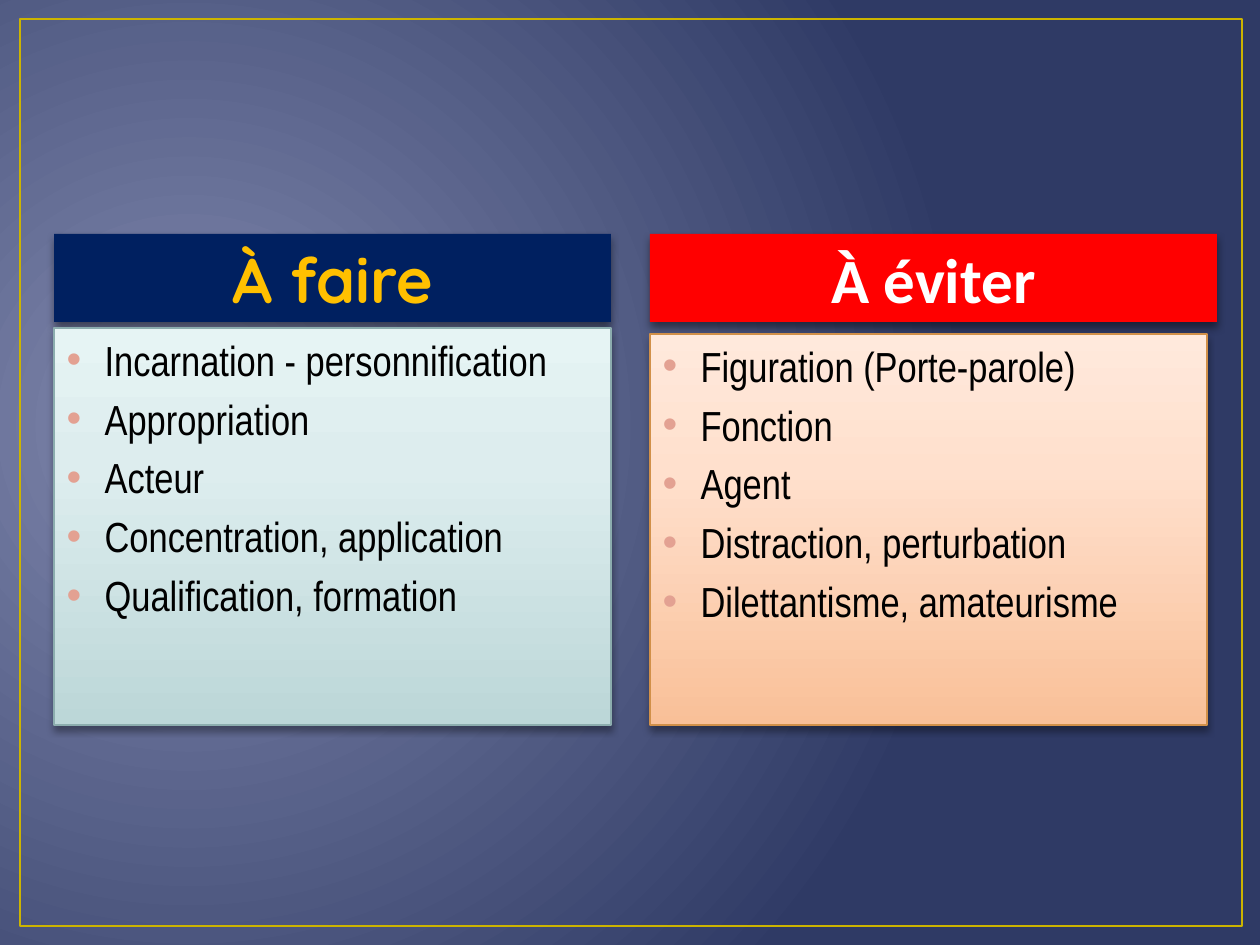
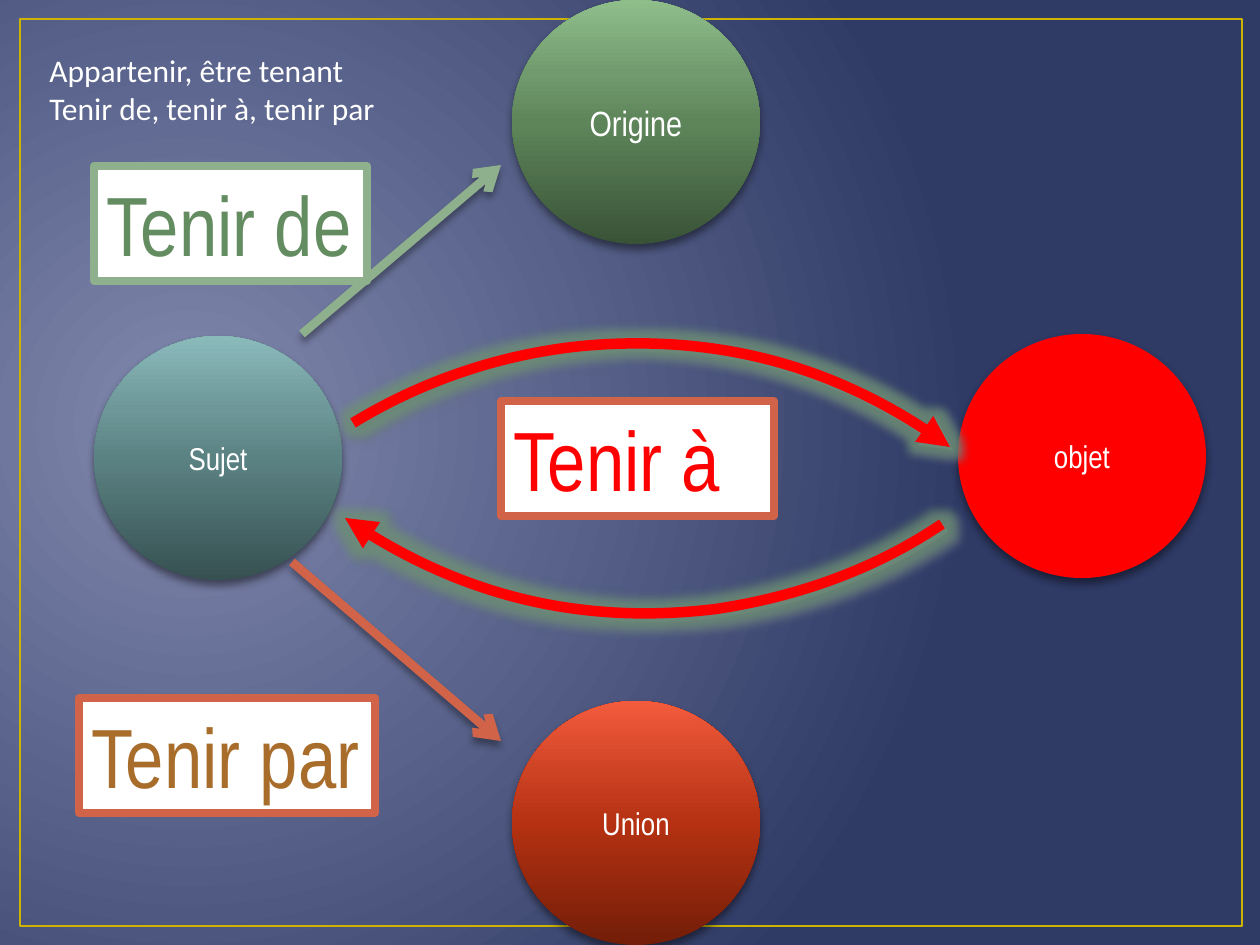
from dataclasses import dataclass

from lxml.etree import SubElement
from pptx import Presentation
from pptx.dml.color import RGBColor
from pptx.enum.shapes import MSO_CONNECTOR as Conn, MSO_SHAPE as Geo
from pptx.enum.text import MSO_ANCHOR as Anchor, MSO_AUTO_SIZE as Auto, PP_ALIGN as Align
from pptx.oxml.ns import qn
from pptx.util import Emu, Pt

PX = 914400 / 126
COMPARISON, BLANK = 4, 6


def px(n):
    return Emu(round(n * PX))


def sub(parent, tag, **attrs):
    return SubElement(parent, qn(tag), {k: str(v) for k, v in attrs.items()})


def add_color(parent, color, alpha=100):
    clr = sub(parent, "a:srgbClr", val=color)
    if alpha < 100:
        sub(clr, "a:alpha", val=alpha * 1000)


@dataclass(frozen=True)
class Theme:
    # gradients are (position in percent, colour) stops
    backdrop: tuple = ((0, "8189AE"), (100, "2F3A65"))
    mint: tuple = ((0, "BCD7D8"), (65, "DDEDEE"), (100, "E6F4F4"))
    peach: tuple = ((0, "F9C098"), (65, "FFE0CD"), (100, "FFE9DC"))
    green_ball: tuple = ((0, "395337"), (50, "5E855A"), (70, "719B6E"), (100, "8FBE8B"))
    rust_ball: tuple = ((0, "731D08"), (50, "B53112"), (70, "CC4223"), (100, "F45B3D"))
    teal_ball: tuple = ((0, "375152"), (50, "5B8283"), (70, "6E9799"), (100, "8BBABB"))
    frame: str = "CCB400"
    mint_edge: str = "8CADAE"
    peach_edge: str = "D19049"
    bullet: str = "E3A192"
    navy: str = "002060"
    gold: str = "FFC000"
    red: str = "FF0000"
    green: str = "8FB08C"
    green_text: str = "648C61"
    rust: str = "D16349"
    ochre: str = "A96D2B"
    white: str = "FFFFFF"
    black: str = "000000"
    glow: str = "719B6E"
    # shadows are colour, opacity, blur, distance, angle
    soft: tuple = ("000000", 35, 4, 3, 90)
    strong: tuple = ("000000", 45, 5, 3, 90)
    hard: tuple = ("646B86", 100, 0, 2.8, 45)
    narrow: str = "Arial Narrow"
    sans: str = "Calibri"
    rounded: str = "Quicksand"
    heading: int = 36
    label: int = 48
    bullets: int = 24
    origin: int = 20
    text: int = 18


class Deck:
    def __init__(self, theme):
        self.t = theme
        self.prs = Presentation()
        self.prs.slide_width, self.prs.slide_height = px(1260), px(945)
        self.slide = None

    def new_slide(self, layout):
        self.slide = self.prs.slides.add_slide(self.prs.slide_layouts[layout])

    def master(self):
        """Give the slide master its radial backdrop and gold frame."""
        master = self.prs.slide_master
        master.background.fill.gradient()
        grad = next(master.element.iter(qn("a:gradFill")))
        self.stops(grad, self.t.backdrop)
        circle = sub(grad, "a:path", path="circle")
        sub(circle, "a:fillToRect", l=15000, t=50000, r=85000, b=60000)
        frame = self.slide.shapes.add_shape(Geo.RECTANGLE, *map(px, (20, 19, 1222, 907)))
        self.style(frame, None, self.t.frame, 1.5)
        master.shapes.element.append(frame.element)

    def stops(self, grad, stops):
        for child in list(grad):
            grad.remove(child)
        gs_list = sub(grad, "a:gsLst")
        for pos, color in stops:
            add_color(sub(gs_list, "a:gs", pos=pos * 1000), color)

    def effects(self, sp, shadow=None, glow=None):
        effects = sub(sp.element.find(qn("p:spPr")), "a:effectLst")
        if glow:
            add_color(sub(effects, "a:glow", rad=Pt(11)), glow, 60)
        if shadow:
            color, alpha, blur, dist, angle = shadow
            outer = sub(effects, "a:outerShdw", blurRad=Pt(blur), dist=Pt(dist),
                        dir=angle * 60000, algn="ctr", rotWithShape=0)
            add_color(outer, color, alpha)

    def style(self, sp, fill, line=None, width=0.75, shadow=None, glow=None):
        """Fill with nothing, one colour or upward gradient stops; then line and effects."""
        if fill is None:
            sp.fill.background()
        elif isinstance(fill, str):
            sp.fill.solid()
            sp.fill.fore_color.rgb = RGBColor.from_string(fill)
        else:
            sp.fill.gradient()
            grad = next(sp.element.iter(qn("a:gradFill")))
            self.stops(grad, fill)
            sub(grad, "a:lin", ang=270 * 60000, scaled=0)
        if line:
            self.stroke(sp, line, width)
        else:
            sp.line.fill.background()
        self.effects(sp, shadow, glow)

    def stroke(self, sp, color, width, head=None):
        sp.line.color.rgb = RGBColor.from_string(color)
        sp.line.width = Pt(width)
        if head:
            sub(sp.element.find(".//" + qn("a:ln")), "a:tailEnd", type=head)

    def set_text(self, sp, lines, size, color, font,
                 align=Align.LEFT, anchor=Anchor.TOP, bold=False):
        tf = sp.text_frame
        tf.text = "\n".join(lines)
        tf.word_wrap, tf.auto_size, tf.vertical_anchor = True, Auto.NONE, anchor
        for p in tf.paragraphs:
            p.alignment = align
            p.font.size, p.font.name, p.font.bold = Pt(size), font, bold
            p.font.color.rgb = RGBColor.from_string(color)

    def placeholder(self, idx, box):
        sp = self.slide.placeholders[idx]
        sp.left, sp.top, sp.width, sp.height = map(px, box)
        return sp

    def heading(self, idx, box, text, fill, color, font):
        sp = self.placeholder(idx, box)
        self.style(sp, fill, shadow=self.t.strong)
        self.set_text(sp, [text], self.t.heading, color, font, Align.CENTER, bold=True)

    def bullets(self, idx, box, items, fill, edge):
        sp = self.placeholder(idx, box)
        self.style(sp, fill, edge, shadow=self.t.soft)
        self.set_text(sp, items, self.t.bullets, self.t.black, self.t.narrow)
        for p_pr in sp.element.iter(qn("a:pPr")):
            p_pr.set("marL", str(px(38)))
            p_pr.set("indent", str(px(-38)))
            font = p_pr.find(qn("a:defRPr"))
            add_color(sub(p_pr, "a:buClr"), self.t.bullet)
            sub(p_pr, "a:buChar", char="•")
            p_pr.append(font)

    def ball(self, x, y, text, fill, size):
        sp = self.slide.shapes.add_shape(Geo.OVAL, *map(px, (x, y, 248, 244)))
        self.style(sp, fill, shadow=self.t.strong)
        self.set_text(sp, [text], size, self.t.white, self.t.narrow,
                      Align.CENTER, Anchor.MIDDLE)

    def label(self, x, y, w, text, color, edge):
        sp = self.slide.shapes.add_shape(Geo.RECTANGLE, *map(px, (x, y, w, 115)))
        self.style(sp, self.t.white, edge, 4.33)
        self.set_text(sp, [text], self.t.label, color, self.t.narrow)
        sp.text_frame.margin_right = 0

    def note(self, box, lines):
        sp = self.slide.shapes.add_textbox(*map(px, box))
        self.set_text(sp, lines, self.t.text, self.t.white, self.t.sans)

    def arrow(self, start, end, color):
        sp = self.slide.shapes.add_connector(Conn.STRAIGHT, *map(px, start + end))
        self.stroke(sp, color, 5, "arrow")
        self.effects(sp, self.t.soft)

    def arc(self, start, *points):
        """Draw a glowing arrow along Bézier curves, three points to a curve."""
        builder = self.slide.shapes.build_freeform(*start, scale=PX)
        builder.add_line_segments(points, close=False)
        sp = builder.convert_to_shape()
        outline = next(sp.element.iter(qn("a:path")))
        segments = outline.findall(qn("a:lnTo"))
        for i in range(0, len(segments), 3):
            curve = sub(outline, "a:cubicBezTo")
            for segment in segments[i:i + 3]:
                curve.append(segment[0])
                outline.remove(segment)
        self.style(sp, None, self.t.red, 6, self.t.hard, self.t.glow)
        self.stroke(sp, self.t.red, 6, "triangle")


def do_and_avoid(deck):
    t = deck.t
    deck.new_slide(COMPARISON)
    deck.master()
    title = deck.slide.shapes.title.element
    title.getparent().remove(title)
    deck.heading(1, (54, 234, 557, 88), "À faire", t.navy, t.gold, t.rounded)
    deck.bullets(2, (54, 328, 557, 397),
                 ["Incarnation - personnification", "Appropriation", "Acteur",
                  "Concentration, application", "Qualification, formation"],
                 t.mint, t.mint_edge)
    deck.heading(3, (650, 234, 567, 88), "À éviter", t.red, t.white, t.sans)
    deck.bullets(4, (650, 334, 557, 391),
                 ["Figuration (Porte-parole)", "Fonction", "Agent",
                  "Distraction, perturbation", "Dilettantisme, amateurisme"],
                 t.peach, t.peach_edge)


def belonging(deck):
    t = deck.t
    deck.new_slide(BLANK)
    deck.ball(512, 0, "Origine", t.green_ball, t.origin)
    deck.ball(512, 701, "Union", t.rust_ball, t.text)
    deck.ball(94, 336, "Sujet", t.teal_ball, t.text)
    deck.ball(958, 334, "objet", t.red, t.text)
    deck.arrow((302, 334), (501, 165), t.green)
    deck.arc((353, 423), (422, 381), (501, 354), (583, 346),
             (714, 334), (847, 370), (950, 447))
    deck.arrow((292, 562), (501, 741), t.rust)
    deck.note((37, 45, 362, 89), ["Appartenir, être tenant", "Tenir de, tenir à, tenir par"])
    deck.label(501, 401, 273, "Tenir à", t.red, t.rust)
    deck.label(94, 166, 273, "Tenir de", t.green_text, t.green)
    deck.label(79, 698, 296, "Tenir par", t.ochre, t.rust)
    deck.arc((942, 524), (874, 570), (796, 597), (716, 609),
             (584, 625), (451, 592), (345, 518))


def main():
    deck = Deck(Theme())
    do_and_avoid(deck)
    belonging(deck)
    deck.prs.save("out.pptx")


if __name__ == "__main__":
    main()
